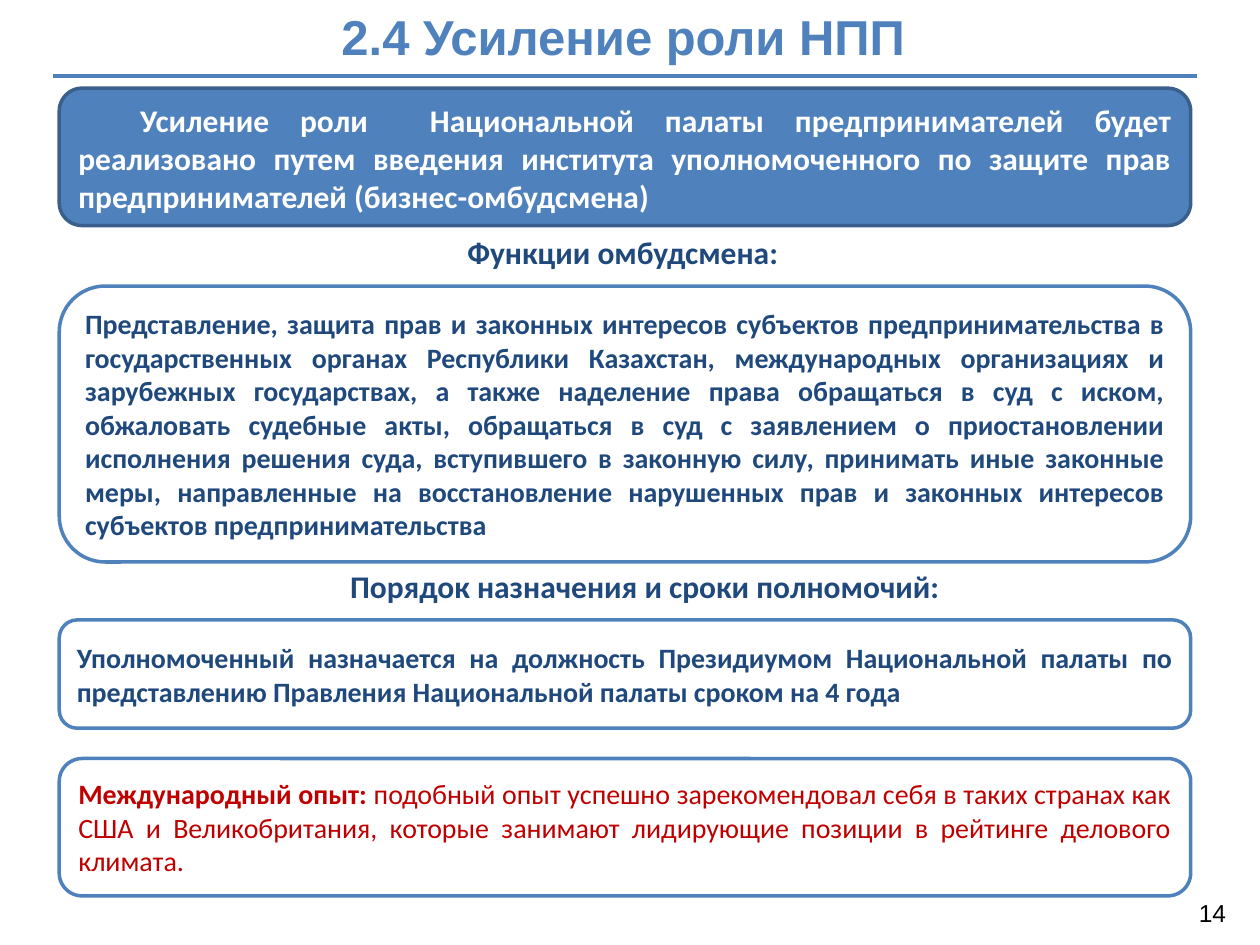
import pptx
import pptx.util
import pptx.dml.color
import pptx.enum.shapes
import pptx.enum.text
from lxml import etree

Inches, Pt = pptx.util.Inches, pptx.util.Pt
RGB = pptx.dml.color.RGBColor
ALIGN = pptx.enum.text.PP_ALIGN
ANCHOR = pptx.enum.text.MSO_ANCHOR
KIND = pptx.enum.shapes.MSO_SHAPE

BLUE = RGB(0x4F, 0x81, 0xBD)
EDGE = RGB(0x3A, 0x5F, 0x8C)
NAVY = RGB(0x1F, 0x49, 0x7D)
RED = RGB(0xC0, 0x00, 0x00)
WHITE = RGB(0xFF, 0xFF, 0xFF)
BLACK = RGB(0x00, 0x00, 0x00)

# Content
TITLE = "2.4 Усиление роли НПП "
PAGE = "14"
INTRO = ("Усиление роли  Национальной палаты предпринимателей будет реализовано "
         "путем введения института уполномоченного по защите прав "
         "предпринимателей (бизнес-омбудсмена)")
DUTIES = ("Представление, защита прав и законных интересов субъектов "
          "предпринимательства в государственных органах Республики Казахстан, "
          "международных организациях и зарубежных государствах, а также "
          "наделение права обращаться в суд с иском, обжаловать судебные акты, "
          "обращаться в суд с заявлением о приостановлении исполнения решения "
          "суда, вступившего в законную силу, принимать иные законные меры, "
          "направленные на восстановление нарушенных прав и законных интересов "
          "субъектов предпринимательства")
TERM = ("Уполномоченный назначается на должность Президиумом Национальной палаты "
        "по представлению Правления Национальной палаты сроком на 4 года")
WORLD = [("Международный опыт: ", True),
         ("подобный опыт успешно зарекомендовал себя в таких странах как США и "
          "Великобритания, которые занимают лидирующие позиции в рейтинге "
          "делового климата.", False)]

# Headings: text, left, top, width
HEADS = [("Функции омбудсмена:", 3.12, 1.8, 3.52),
         ("Порядок назначения и сроки полномочий:", 2.19, 4.45, 6.48)]

# Panels: runs, top, height, fill, edge, ink, size, first-line indent, anchor
PANELS = [
    ([(INTRO, True)], 0.7, 1.09, BLUE, EDGE, WHITE, 18, 0.49, ANCHOR.TOP),
    ([(DUTIES, True)], 2.27, 2.19, WHITE, BLUE, NAVY, 16, 0, ANCHOR.MIDDLE),
    ([(TERM, True)], 4.92, 0.86, WHITE, BLUE, NAVY, 16, 0, ANCHOR.MIDDLE),
    (WORLD, 6.02, 1.09, WHITE, BLUE, RED, 16, 0, ANCHOR.MIDDLE),
]
LEFT, WIDTH = 0.47, 8.98


def write(shape, runs, size, ink, align, face="Calibri", indent=0,
          anchor=ANCHOR.TOP):
    frame = shape.text_frame
    frame.word_wrap = True
    frame.vertical_anchor = anchor
    para = frame.paragraphs[0]
    para.alignment = align
    para.font.name = face
    para.font.size = Pt(size)
    para.font.color.rgb = ink
    for text, bold in runs:
        run = para.add_run()
        run.text = text
        run.font.bold = bold
    if indent:
        props = para._p.get_or_add_pPr()
        props.set("marL", "0")
        props.set("indent", str(Inches(indent)))


def label(slide, box, *args, **style):
    shape = slide.shapes.add_textbox(*map(Inches, box))
    write(shape, *args, **style)


def main():
    deck = pptx.Presentation()
    deck.slide_width, deck.slide_height = Inches(10), Inches(7.5)
    slide = deck.slides.add_slide(deck.slide_layouts[6])

    # Title and rule
    label(slide, (0, 0, 10, 0.57), [(TITLE, True)], 28, BLUE, ALIGN.CENTER,
          face="Arial")
    rule = slide.shapes.add_connector(
        pptx.enum.shapes.MSO_CONNECTOR.STRAIGHT,
        Inches(0.42), Inches(0.6), Inches(9.5), Inches(0.6))
    rule.line.color.rgb = BLUE
    rule.line.width = Pt(2.25)
    etree.SubElement(rule._element.spPr, pptx.oxml.ns.qn("a:effectLst"))

    # Page number
    label(slide, (7.5, 6.98, 2.33, 0.52), [(PAGE, False)], 14, BLACK,
          ALIGN.RIGHT, face="Arial", anchor=ANCHOR.MIDDLE)

    # Panels
    for runs, top, high, fill, edge, ink, size, indent, anchor in PANELS:
        panel = slide.shapes.add_shape(
            KIND.ROUNDED_RECTANGLE, *map(Inches, (LEFT, top, WIDTH, high)))
        panel.shadow.inherit = False
        panel.fill.solid()
        panel.fill.fore_color.rgb = fill
        panel.line.color.rgb = edge
        panel.line.width = Pt(2)
        write(panel, runs, size, ink, ALIGN.JUSTIFY, indent=indent,
              anchor=anchor)

    # Headings between panels
    for text, left, top, wide in HEADS:
        label(slide, (left, top, wide, 0.4), [(text, True)], 18, NAVY,
              ALIGN.JUSTIFY, indent=0.49)

    deck.save("out.pptx")


if __name__ == "__main__":
    main()
